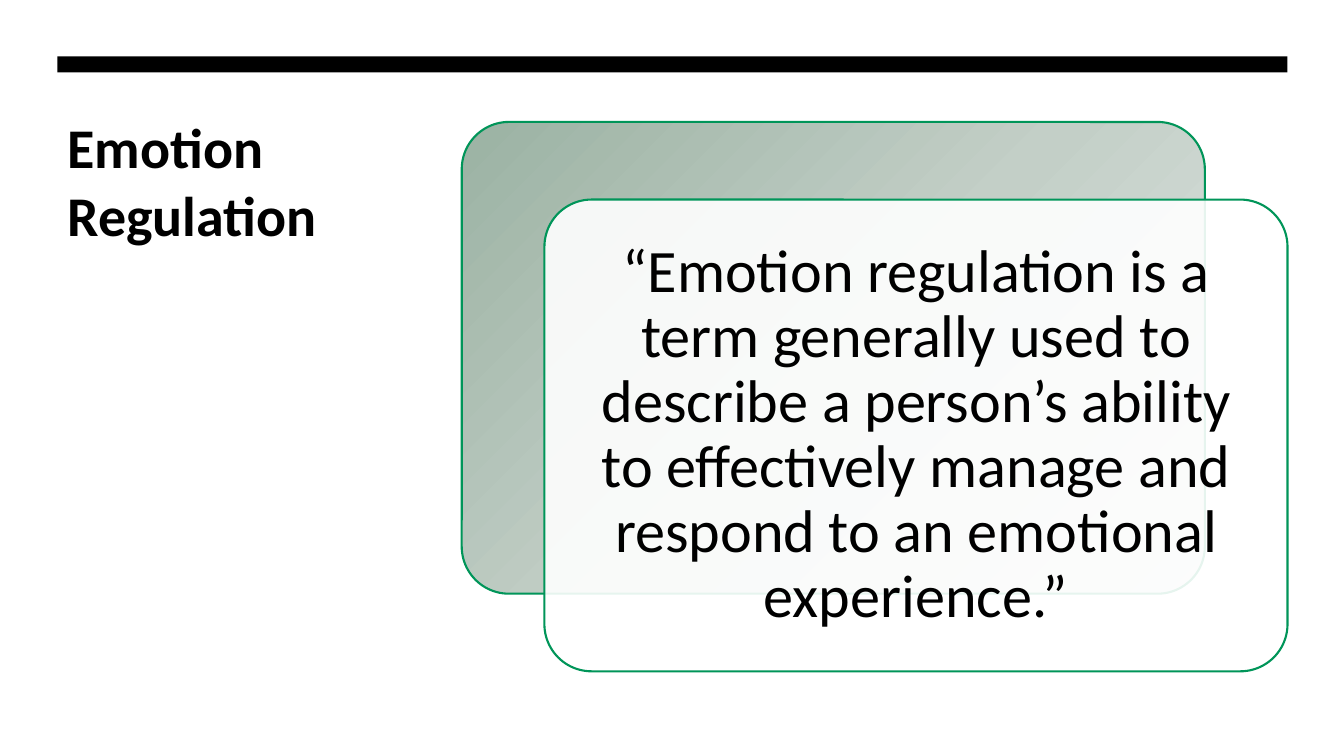
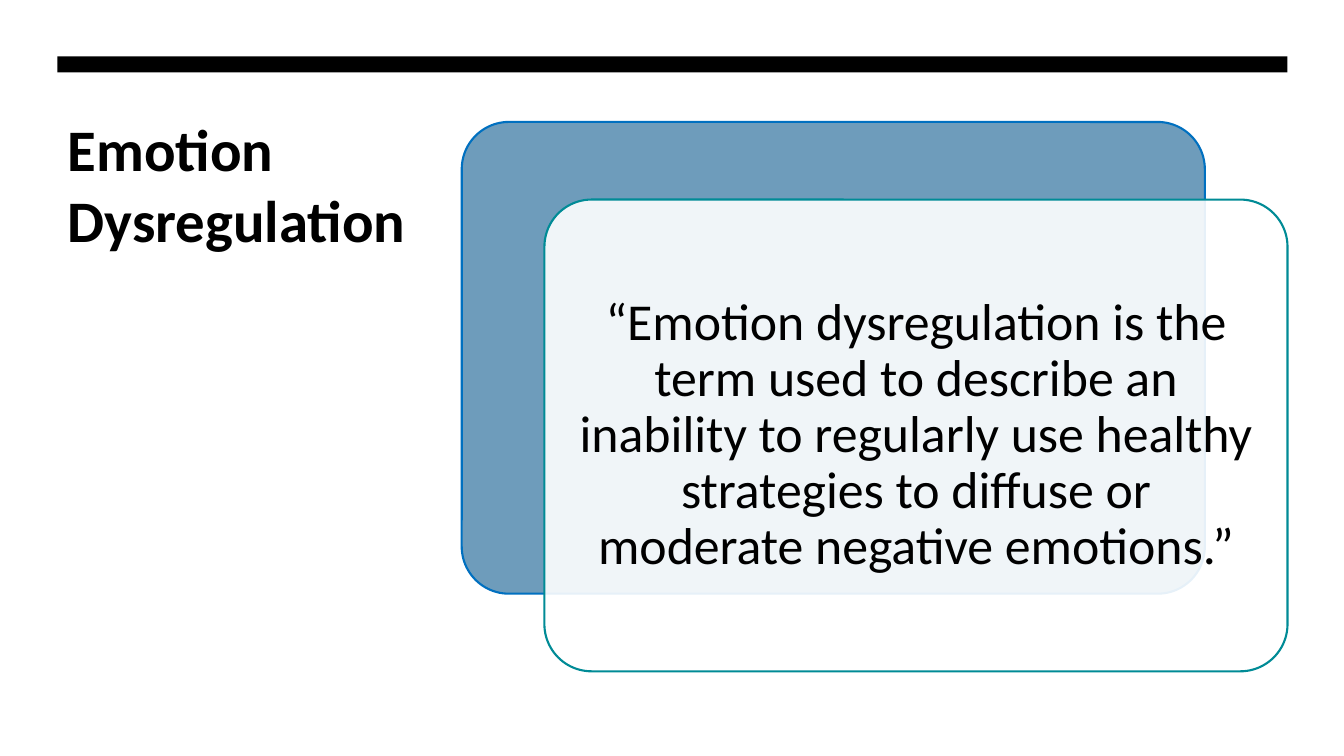
from lxml import etree
from pptx import Presentation
from pptx import util as u
from pptx.dml.color import RGBColor
from pptx.enum import shapes, text
from pptx.oxml.ns import qn

PX = 9144  # 100 px to the inch
FONT = "Calibri"
BLACK, WHITE = "000000", "FFFFFF"
BAR = (57, 56, 1220, 16)
BACK = (458, 121, 737, 468)
SHIFT = (82, 77)  # offset of the front card from the back card
EDGE = 14  # gap between the front card and its text

SLIDES = [
    dict(title=["Emotion Regulation"], size=40, box=(57, 107, 345, 445),
         fill=["9BB2A3", "C3CFC7", "E2E7E4"], lines=("009559", "009559"),
         quote="“Emotion regulation is a term generally used to describe a "
               "person’s ability to effectively manage and respond to an "
               "emotional experience.”",
         points=43, inset=18),
    dict(title=["Emotion", "Dysregulation"], size=42, box=(57, 107, 1220, 160),
         fill=["6E9CBB"], lines=("0070C0", "008B96"),
         quote="“Emotion dysregulation is the term used to describe an "
               "inability to regularly use healthy strategies to diffuse or "
               "moderate negative emotions.”",
         points=37, inset=15),
]


def rgb(code):
    return RGBColor.from_string(code)


def emu(box):
    return [u.Emu(n * PX) for n in box]


def blend(fill, codes):
    """Diagonal gradient with evenly spaced stops."""
    fill.gradient()
    fill.gradient_angle = 315
    stops = fill._xPr.find(".//" + qn("a:gsLst"))
    for old in list(stops):
        stops.remove(old)
    for i, code in enumerate(codes):
        pos = 100000 * i // (len(codes) - 1)
        stop = etree.SubElement(stops, qn("a:gs"), pos=str(pos))
        etree.SubElement(stop, qn("a:srgbClr"), val=code)


def block(slide, kind, box, codes, line=None, alpha=None):
    shape = slide.shapes.add_shape(kind, *emu(box))
    shape.shadow.inherit = False
    if len(codes) > 1:
        blend(shape.fill, codes)
    else:
        shape.fill.solid()
        shape.fill.fore_color.rgb = rgb(codes[0])
    if alpha:
        color = shape.fill._xPr.find(".//" + qn("a:srgbClr"))
        etree.SubElement(color, qn("a:alpha"), val=str(alpha * 1000))
    if line:
        shape.line.color.rgb = rgb(line)
        shape.line.width = u.Pt(1.5)
    else:
        shape.line.fill.background()
    return shape


def card(slide, box, codes, line, alpha=None):
    shape = block(slide, shapes.MSO_SHAPE.ROUNDED_RECTANGLE, box, codes,
                  line, alpha)
    shape.adjustments[0] = 0.1


def write(para, words, size, bold=False):
    run = para.add_run()
    run.text = words
    font = run.font
    font.name, font.size, font.bold = FONT, u.Pt(size), bold
    font.color.rgb = rgb(BLACK)


def head(slide, rows, size, box):
    title = slide.shapes.title
    title.left, title.top, title.width, title.height = emu(box)
    frame = title.text_frame
    frame.word_wrap = True
    frame.auto_size = text.MSO_AUTO_SIZE.NONE
    frame.vertical_anchor = text.MSO_ANCHOR.TOP
    para = frame.paragraphs[0]
    para.alignment = text.PP_ALIGN.LEFT
    for i, row in enumerate(rows):
        if i:
            para.add_line_break()
        write(para, row, size, True)


def quote(slide, box, words, size, inset):
    frame = slide.shapes.add_textbox(*emu(box)).text_frame
    frame.word_wrap = True
    frame.vertical_anchor = text.MSO_ANCHOR.MIDDLE
    frame.margin_left = frame.margin_right = u.Emu(inset * PX)
    frame.margin_top = frame.margin_bottom = u.Emu(inset * PX)
    para = frame.paragraphs[0]
    para.alignment = text.PP_ALIGN.CENTER
    para.line_spacing = 0.9
    write(para, words, size)


def build(deck, item):
    slide = deck.slides.add_slide(deck.slide_layouts[5])
    block(slide, shapes.MSO_SHAPE.RECTANGLE, BAR, [BLACK])
    head(slide, item["title"], item["size"], item["box"])
    left, top, wide, high = BACK
    left, top = left + SHIFT[0], top + SHIFT[1]
    rear, front = item["lines"]
    card(slide, BACK, item["fill"], rear)
    card(slide, (left, top, wide, high), [WHITE], front, 90)
    inner = (left + EDGE, top + EDGE, wide - 2 * EDGE, high - 2 * EDGE)
    quote(slide, inner, item["quote"], item["points"], item["inset"])


def main():
    deck = Presentation()
    deck.slide_width, deck.slide_height = emu((1333, 750))
    for item in SLIDES:
        build(deck, item)
    deck.save("out.pptx")


if __name__ == "__main__":
    main()
